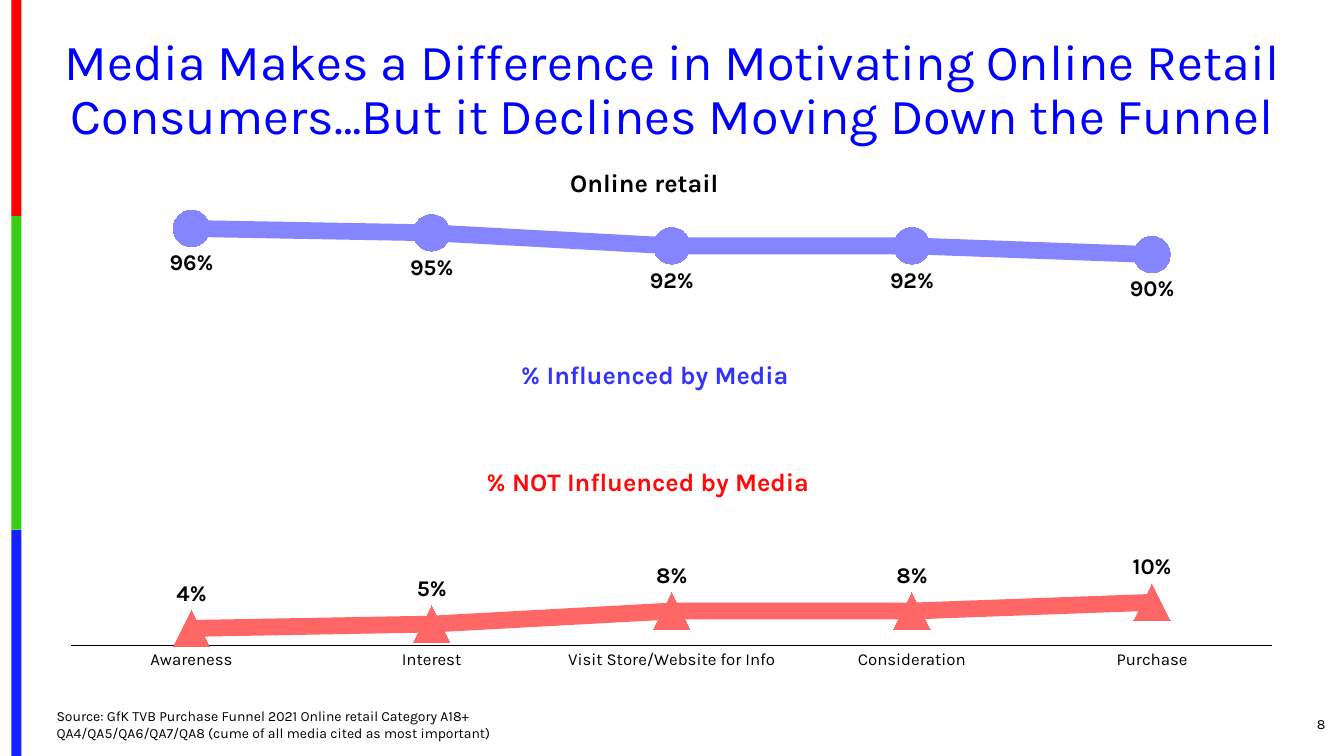
"""Build the slide on how media sways online retail shoppers down the funnel."""
from dataclasses import dataclass

from lxml import etree
from pptx import Presentation
from pptx import util as u
from pptx.chart.data import CategoryChartData
from pptx.dml.color import RGBColor
from pptx.enum import chart as ch, shapes, text
from pptx.oxml.ns import qn

FONT = "Karla"
HUES = {
    "black": "000000", "title": "0000FF",
    "red": "FE0000", "green": "36CF12", "blue": "1322FE",
    "media": "3333FF", "media_line": "8585FF",
    "other": "FF0909", "other_line": "FF6666",
}
STAGES = ["Awareness", "Interest", "Visit Store/Website for Info",
          "Consideration", "Purchase"]


@dataclass
class Band:
    hue: str
    tall: float


@dataclass
class Label:
    words: str
    hue: str
    box: tuple[float, float, float, float]
    size: int = 18
    bold: bool = True
    right: bool = False


@dataclass
class Trend:
    name: str
    vals: list[float]
    hue: str
    mark: ch.XL_MARKER_STYLE
    side: ch.XL_LABEL_POSITION


BANDS = [Band("red", 5.45), Band("green", 7.9), Band("blue", 5.7)]
LABELS = [
    Label("% Influenced by Media", "media", (12.88, 8.92, 8.05, 1.02)),
    Label("% NOT Influenced by Media", "other", (12.01, 11.63, 9.6, 1.02)),
    Label("Online retail", "black", (14.12, 4.09, 4.47, 1.02)),
    Label("8", "black", (30.91, 17.73, 2.74, 1.02), 10, False, True),
]
TRENDS = [
    Trend("Series 1", [0.96, 0.95, 0.92, 0.92, 0.9], "media",
          ch.XL_MARKER_STYLE.CIRCLE, ch.XL_LABEL_POSITION.BELOW),
    Trend("Series 2", [0.04, 0.05, 0.08, 0.08, 0.1], "other",
          ch.XL_MARKER_STYLE.TRIANGLE, ch.XL_LABEL_POSITION.ABOVE),
]


def tint(name: str) -> RGBColor:
    """Return a named colour."""
    return RGBColor.from_string(HUES[name])


def style(font, size: int, hue: str = "black", bold: bool = False) -> None:
    """Set the face, size, colour and weight of a font."""
    font.name, font.size, font.bold = FONT, u.Pt(size), bold
    font.color.rgb = tint(hue)


def write(para, words: str, size: int, hue: str, bold: bool = False) -> None:
    """Add one styled run to a paragraph."""
    run = para.add_run()
    run.text = words
    style(run.font, size, hue, bold)


def place(item, box: tuple[float, float, float, float]) -> None:
    """Move and size a shape in centimetres."""
    item.left, item.top, item.width, item.height = map(u.Cm, box)


def draw_bands(slide) -> None:
    """Stack the coloured bands down the left edge."""
    top = 0.0
    for band in BANDS:
        bar = slide.shapes.add_shape(
            shapes.MSO_SHAPE.RECTANGLE,
            *map(u.Cm, (0.29, top, 0.25, band.tall)))
        bar.shadow.inherit = False
        bar.fill.solid()
        bar.fill.fore_color.rgb = tint(band.hue)
        bar.line.fill.background()
        top += band.tall


def fill_title(slide) -> None:
    """Place and write the title."""
    title = slide.shapes.title
    place(title, (1.17, 0.79, 31.55, 3.02))
    frame = title.text_frame
    frame.auto_size = text.MSO_AUTO_SIZE.NONE
    frame.vertical_anchor = text.MSO_ANCHOR.MIDDLE
    para = frame.paragraphs[0]
    para.alignment = text.PP_ALIGN.CENTER
    para.line_spacing = 0.9
    write(para, "Media Makes a Difference in Motivating Online Retail "
          "Consumers…But it Declines Moving Down the Funnel", 36, "title")


def fill_source(slide) -> None:
    """Place and write the source note."""
    body = slide.placeholders[1]
    place(body, (1.17, 17.68, 24, 1.12))
    frame = body.text_frame
    frame.auto_size = text.MSO_AUTO_SIZE.NONE
    frame.vertical_anchor = text.MSO_ANCHOR.BOTTOM
    para = frame.paragraphs[0]
    props = para._p.get_or_add_pPr()
    props.set("marL", "0")
    props.set("indent", "0")
    etree.SubElement(props, qn("a:buNone"))
    para.space_before = u.Pt(0)
    write(para, "Source: GfK TVB Purchase Funnel 2021 Online retail "
          "Category A18+", 10, "black")
    para.add_line_break()
    write(para, "QA4/QA5/QA6/QA7/QA8 (cume of all media cited as most "
          "important)", 10, "black")


def draw_label(slide, label: Label) -> None:
    """Add one line of free text."""
    box = slide.shapes.add_textbox(*map(u.Cm, label.box))
    frame = box.text_frame
    frame.word_wrap = label.right
    frame.vertical_anchor = (text.MSO_ANCHOR.MIDDLE if label.right
                             else text.MSO_ANCHOR.TOP)
    para = frame.paragraphs[0]
    para.alignment = (text.PP_ALIGN.RIGHT if label.right
                      else text.PP_ALIGN.LEFT)
    write(para, label.words, label.size, label.hue, label.bold)


def set_plot(chart) -> None:
    """Fix the inner plot area as shares of the chart."""
    area = chart._chartSpace.find(".//" + qn("c:plotArea"))
    for old in area.findall(qn("c:layout")):
        area.remove(old)
    root = etree.Element(qn("c:layout"))
    area.insert(0, root)
    spot = etree.SubElement(root, qn("c:manualLayout"))
    for tag, val in (("layoutTarget", "inner"), ("xMode", "edge"),
                     ("yMode", "edge"), ("x", "0.02"), ("y", "0.02"),
                     ("w", "0.96"), ("h", "0.91")):
        etree.SubElement(spot, qn("c:" + tag)).set("val", val)


def style_trend(line, trend: Trend) -> None:
    """Format one series with its markers and labels."""
    line.smooth = False
    line.format.line.width = u.Pt(12)
    line.format.line.color.rgb = tint(trend.hue + "_line")
    mark = line.marker
    mark.style, mark.size = trend.mark, 26
    mark.format.fill.solid()
    mark.format.fill.fore_color.rgb = tint(trend.hue)
    mark.format.line.fill.background()
    tags = line.data_labels
    tags.show_value = True
    tags.number_format, tags.number_format_is_linked = "0%", False
    tags.position = trend.side
    style(tags.font, 16, bold=True)


def draw_chart(slide) -> None:
    """Add the line chart of both trends."""
    data = CategoryChartData(number_format="0%")
    data.categories = STAGES
    for trend in TRENDS:
        data.add_series(trend.name, trend.vals)
    chart = slide.shapes.add_chart(
        ch.XL_CHART_TYPE.LINE_MARKERS,
        *map(u.Cm, (1.17, 5.08, 31.52, 12.04)), data).chart
    chart.has_title = chart.has_legend = False
    style(chart.font, 10)
    set_plot(chart)
    base, scale = chart.category_axis, chart.value_axis
    base.major_tick_mark = base.minor_tick_mark = ch.XL_TICK_MARK.NONE
    base.format.line.color.rgb = tint("black")
    base.format.line.width = u.Pt(0.75)
    style(base.tick_labels.font, 12)
    scale.minimum_scale, scale.maximum_scale = 0, 1
    scale.has_major_gridlines = scale.visible = False
    chart.plots[0].vary_by_categories = False
    for line, trend in zip(chart.plots[0].series, TRENDS):
        style_trend(line, trend)


def main() -> None:
    """Build and save the deck."""
    deck = Presentation()
    deck.slide_width, deck.slide_height = u.Cm(33.87), u.Cm(19.05)
    slide = deck.slides.add_slide(deck.slide_layouts[1])
    draw_bands(slide)
    fill_title(slide)
    fill_source(slide)
    draw_chart(slide)
    for label in LABELS:
        draw_label(slide, label)
    deck.save("out.pptx")


if __name__ == "__main__":
    main()
